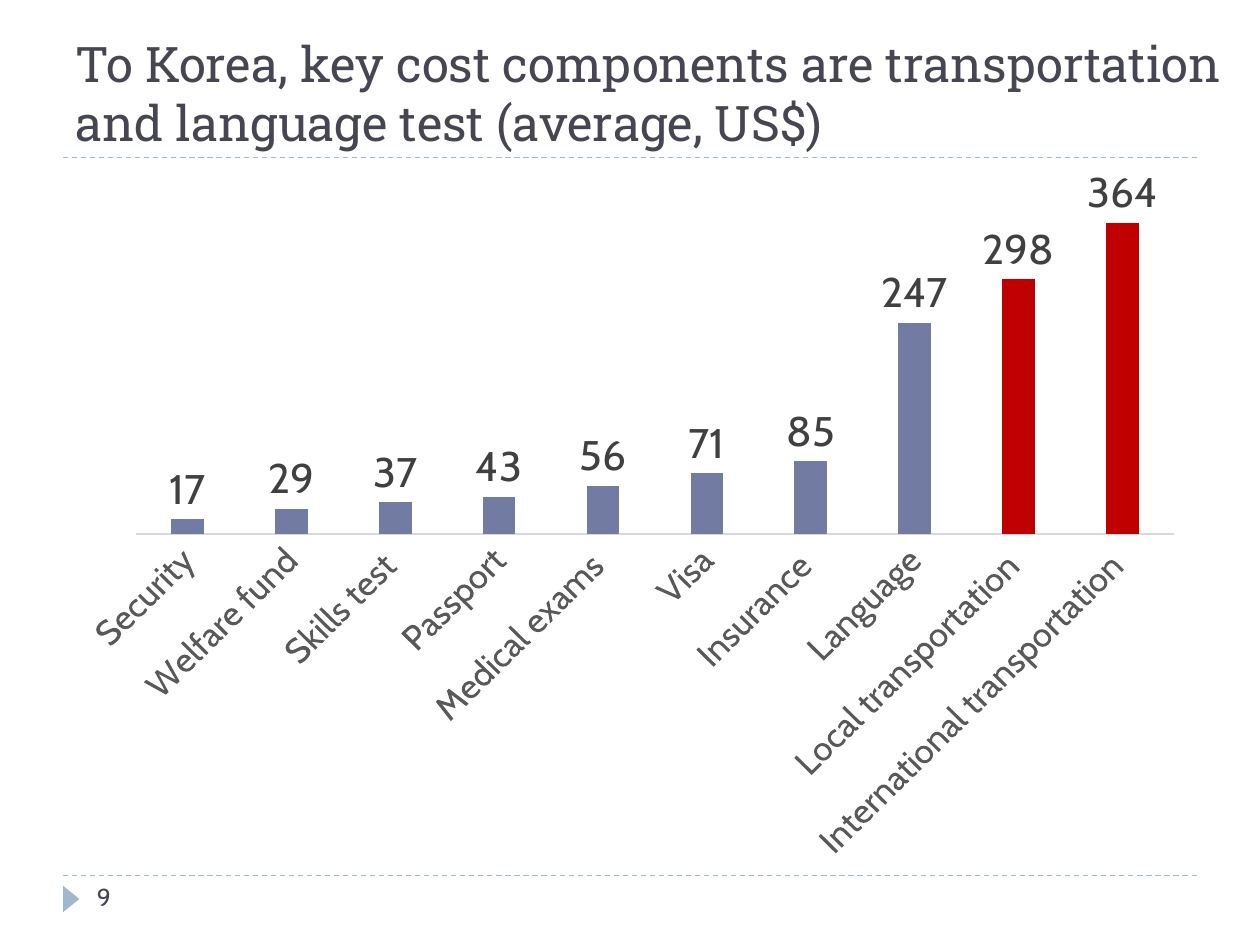
from typing import NamedTuple

from lxml import etree
from pptx import Presentation
from pptx.chart.data import CategoryChartData
from pptx.dml.color import RGBColor
from pptx.enum.chart import XL_CHART_TYPE, XL_LABEL_POSITION, XL_TICK_MARK
from pptx.enum.dml import MSO_LINE
from pptx.enum.shapes import MSO_CONNECTOR, MSO_SHAPE
from pptx.enum.text import MSO_ANCHOR, MSO_AUTO_SIZE, PP_ALIGN
from pptx.oxml.ns import qn
from pptx.util import Pt

COLUMNS = XL_CHART_TYPE.COLUMN_CLUSTERED
OUTSIDE = XL_LABEL_POSITION.OUTSIDE_END
NO_TICK = XL_TICK_MARK.NONE
STRAIGHT = MSO_CONNECTOR.STRAIGHT
TRIANGLE = MSO_SHAPE.ISOSCELES_TRIANGLE
DASH = MSO_LINE.DASH
TOP, BOTTOM = MSO_ANCHOR.TOP, MSO_ANCHOR.BOTTOM

PX = 9144  # EMU per px, 100 px to the inch
INK, ACCENT, BAR, HIGHLIGHT = "464653", "9FB8CD", "727CA3", "C00000"


class Box(NamedTuple):
    left: int
    top: int
    width: int
    height: int

    def emu(self) -> list[int]:
        return [value * PX for value in self]


class Cost(NamedTuple):
    name: str
    dollars: int
    color: str = BAR


COSTS = [
    Cost("Security", 17),
    Cost("Welfare fund", 29),
    Cost("Skills test ", 37),
    Cost("Passport", 43),
    Cost("Medical exams ", 56),
    Cost("Visa", 71),
    Cost("Insurance ", 85),
    Cost("Language", 247),
    Cost("Local transportation ", 298, HIGHLIGHT),
    Cost("International transportation ", 364, HIGHLIGHT),
]


def rgb(color: str) -> RGBColor:
    return RGBColor.from_string(color)


def apply(target, **formats) -> None:
    for name, value in formats.items():
        setattr(target, name, value)


def style_font(font, size: int, color: str, name: str = "Cabin") -> None:
    apply(font, size=Pt(size), name=name, bold=False)
    font.color.rgb = rgb(color)


def paint(fill, color: str) -> None:
    fill.solid()
    fill.fore_color.rgb = rgb(color)


def write(shape, box: Box, text: str, size: int, name: str, anchor) -> None:
    apply(shape, **dict(zip(Box._fields, box.emu())))
    frame = shape.text_frame
    apply(frame, word_wrap=True, auto_size=MSO_AUTO_SIZE.NONE, vertical_anchor=anchor)
    para = frame.paragraphs[0]
    para.alignment = PP_ALIGN.LEFT
    span = para.add_run()
    span.text = text
    style_font(span.font, size, INK, name)


def draw_rule(page, top: int) -> None:
    rule = page.shapes.add_connector(STRAIGHT, 50 * PX, top * PX, 950 * PX, top * PX)
    rule.line.color.rgb = rgb(ACCENT)
    apply(rule.line, width=Pt(0.75), dash_style=DASH)
    etree.SubElement(rule.line._get_or_add_ln().getparent(), qn("a:effectLst"))


def draw_marker(page, box: Box) -> None:
    marker = page.shapes.add_shape(TRIANGLE, *box.emu())
    marker.rotation = 90
    marker.shadow.inherit = False
    paint(marker.fill, ACCENT)
    marker.line.fill.background()


def draw_chart(page, box: Box, costs: list[Cost]) -> None:
    data = CategoryChartData(number_format="#,##0")
    data.categories = [cost.name for cost in costs]
    data.add_series("Series 1", [cost.dollars for cost in costs])
    chart = page.shapes.add_chart(COLUMNS, *box.emu(), data).chart
    apply(chart, has_legend=False, has_title=False)
    style_font(chart.font, 10, "000000")

    # Axes
    apply(chart.value_axis, visible=False, has_major_gridlines=False, minimum_scale=0)
    axis = chart.category_axis
    apply(axis, major_tick_mark=NO_TICK, minor_tick_mark=NO_TICK)
    style_font(axis.tick_labels.font, 20, "595959")
    axis.format.line.color.rgb = rgb("D9D9D9")
    axis.format.line.width = Pt(0.75)
    axis._element.find(qn("c:txPr")).find(qn("a:bodyPr")).set("rot", "-2700000")

    # Columns and their values
    plot = chart.plots[0]
    apply(plot, gap_width=219, overlap=-27, vary_by_categories=False, has_data_labels=True)
    apply(plot.data_labels, show_value=True, position=OUTSIDE,
          number_format="#,##0", number_format_is_linked=False)
    style_font(plot.data_labels.font, 24, "404040")
    series = plot.series[0]
    paint(series.format.fill, BAR)
    for index, cost in enumerate(costs):
        if cost.color != BAR:
            paint(series.points[index].format.fill, cost.color)


def main() -> None:
    deck = Presentation()
    apply(deck, slide_width=1000 * PX, slide_height=750 * PX)
    page = deck.slides.add_slide(deck.slide_layouts[5])

    # Frame of the page
    for top in (695, 125):
        draw_rule(page, top)
    draw_marker(page, Box(46, 707, 21, 13))

    # Title, page number and chart
    write(page.shapes.title, Box(50, 17, 950, 108),
          "To Korea, key cost components are transportation and language test (average, US$)",
          28, "Roboto Slab", BOTTOM)
    number_box = Box(67, 695, 217, 40)
    write(page.shapes.add_textbox(*number_box.emu()), number_box, "9", 14, "Cabin", TOP)
    draw_chart(page, Box(50, 133, 900, 562), COSTS)

    deck.save("out.pptx")


if __name__ == "__main__":
    main()
